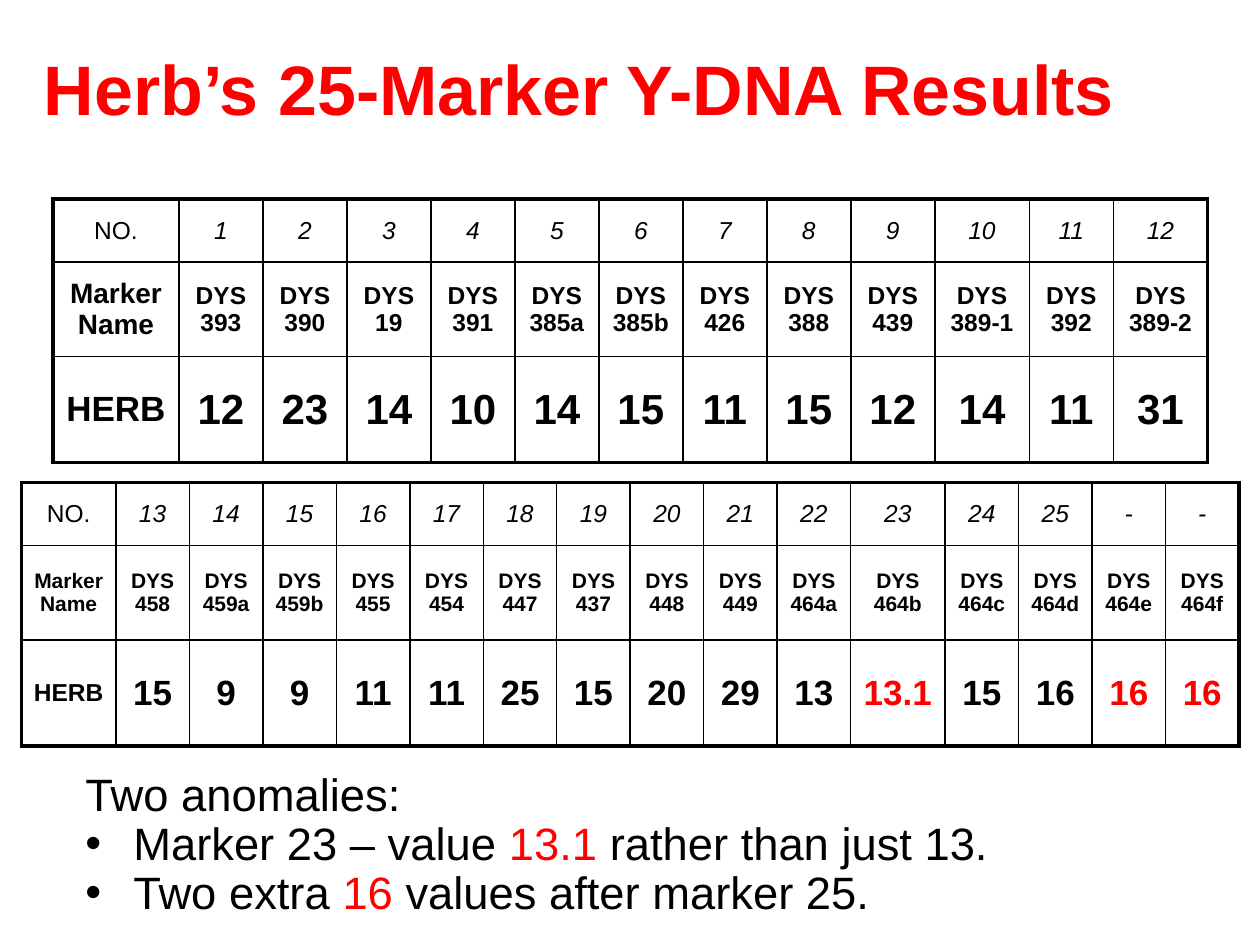
from lxml.etree import SubElement
from pptx import Presentation
from pptx.dml.color import RGBColor
from pptx.enum.text import MSO_ANCHOR, PP_ALIGN
from pptx.oxml.ns import qn
from pptx.util import Emu, Inches, Pt

FONT, BLACK, RED = "Arial", "000000", "FF0000"
THIN, THICK = 1, 2.25

# Content
TITLE = "Herb’s 25-Marker Y-DNA Results"
ROW_LABELS = ("NO.", "Marker\vName", "HERB")
ROW_HEIGHTS = (0.5, 0.75, 0.84)
ROW_STYLES = ({"italic": True}, {"bold": True}, {"bold": True})

# Wide columns are 3/4 inch; sizes hold label size and value size for each row
PANELS = [
    {
        "left": 0.42, "top": 1.58, "label_width": 1, "width": 2 / 3,
        "wide": ("10", "12"), "sizes": ((14, 14), (16, 14), (20, 24)),
        "numbers": "1 2 3 4 5 6 7 8 9 10 11 12",
        "markers": "393 390 19 391 385a 385b 426 388 439 389-1 392 389-2",
        "values": "12 23 14 10 14 15 11 15 12 14 11 31",
        "anomalies": (),
    },
    {
        "left": 0.17, "top": 3.83, "label_width": 0.75, "width": 7 / 12,
        "wide": ("23",), "sizes": ((14, 14), (12, 12), (14, 20)),
        "numbers": "13 14 15 16 17 18 19 20 21 22 23 24 25 - -",
        "markers": "458 459a 459b 455 454 447 437 448 449 464a 464b 464c 464d 464e 464f",
        "values": "15 9 9 11 11 25 15 20 29 13 13.1 15 16 16 16",
        "anomalies": (11, 14, 15),
    },
]

# Each line: bulleted or not, then (text, colour) spans
NOTES = [
    (False, [("Two anomalies:", BLACK)]),
    (True, [("Marker 23 – value ", BLACK), ("13.1", RED), (" rather than just 13.", BLACK)]),
    (True, [("Two extra ", BLACK), ("16", RED), (" values after marker 25.", BLACK)]),
]


def colour(value):
    return RGBColor.from_string(value)


def style(span, size, hue=BLACK, **extra):
    formats = {"name": FONT, "size": Pt(size), **extra}
    for name, value in formats.items():
        setattr(span.font, name, value)
    span.font.color.rgb = colour(hue)


def add_box(page, left, top, width, height):
    frame = page.shapes.add_textbox(*map(Inches, (left, top, width, height))).text_frame
    frame.word_wrap = True
    return frame


def set_borders(cell, widths):
    properties = cell._tc.get_or_add_tcPr()
    for index, (side, width) in enumerate(widths.items()):
        line = SubElement(properties, qn(f"a:ln{side}"), w=str(Pt(width)))
        fill = SubElement(line, qn("a:solidFill"))
        SubElement(fill, qn("a:srgbClr"), val=BLACK)
        properties.insert(index, line)  # borders come before the fill


def fill_cell(cell, text, size, hue, extra):
    formats = {
        "vertical_anchor": MSO_ANCHOR.MIDDLE,
        "margin_left": Inches(0.09), "margin_right": Inches(0.09),
        "margin_top": Inches(0.05), "margin_bottom": Inches(0.05),
    }
    for name, value in formats.items():
        setattr(cell, name, value)
    cell.fill.background()
    para = cell.text_frame.paragraphs[0]
    para.text = text
    para.alignment = PP_ALIGN.CENTER
    for span in para.runs:
        style(span, size, hue, **extra)
    for line_break in para._p.findall(qn("a:br")):
        SubElement(line_break, qn("a:rPr"), sz=str(size * 100))


def add_panel(page, panel):
    numbers = panel["numbers"].split()
    markers = [f"DYS\v{name}" for name in panel["markers"].split()]
    rows = [[label, *cells] for label, cells in
            zip(ROW_LABELS, (numbers, markers, panel["values"].split()))]
    widths = [panel["label_width"]]
    widths += [0.75 if number in panel["wide"] else panel["width"] for number in numbers]
    last_row, last_column = len(rows) - 1, len(widths) - 1

    frame = page.shapes.add_table(
        len(rows), len(widths), Inches(panel["left"]), Inches(panel["top"]),
        Inches(sum(widths)), Inches(sum(ROW_HEIGHTS)))
    table = frame.table
    table.first_row = table.horz_banding = False
    for column, width in zip(table.columns, widths):
        column.width = Inches(width)
    for row, height in zip(table.rows, ROW_HEIGHTS):
        row.height = Inches(height)

    for r, texts in enumerate(rows):
        for c, text in enumerate(texts):
            cell = table.cell(r, c)
            size = panel["sizes"][r][min(c, 1)]
            hue = RED if r == last_row and c in panel["anomalies"] else BLACK
            plain = r == 0 and c == 0
            fill_cell(cell, text, size, hue, {} if plain else ROW_STYLES[r])
            outer = {"L": c == 0, "R": c == last_column, "T": r == 0, "B": r == last_row}
            set_borders(cell, {side: THICK if edge else THIN for side, edge in outer.items()})


def add_notes(page):
    frame = add_box(page, 0.58, 6.08, 9, 1.28)
    indent = Inches(0.38)
    for index, (bulleted, spans) in enumerate(NOTES):
        para = frame.paragraphs[0] if index == 0 else frame.add_paragraph()
        para.line_spacing = 0.9
        properties = para._p.get_or_add_pPr()
        properties.set("marL", str(indent))
        properties.set("indent", str(Emu(-indent)))
        if bulleted:
            SubElement(properties, qn("a:buFont"), typeface=FONT)
            SubElement(properties, qn("a:buChar"), char="•")
        for text, hue in spans:
            span = para.add_run()
            span.text = text
            style(span, 25.9, hue)


def main():
    deck = Presentation()
    deck.slide_width, deck.slide_height = Inches(10), Inches(7.5)
    page = deck.slides.add_slide(deck.slide_layouts[6])

    # Title
    frame = add_box(page, 0.25, 0.18, 8.96, 1.03)
    frame.vertical_anchor = MSO_ANCHOR.MIDDLE
    span = frame.paragraphs[0].add_run()
    span.text = TITLE
    style(span, 40, RED, bold=True)

    # Marker tables and remarks
    for panel in PANELS:
        add_panel(page, panel)
    add_notes(page)
    deck.save("out.pptx")


if __name__ == "__main__":
    main()
